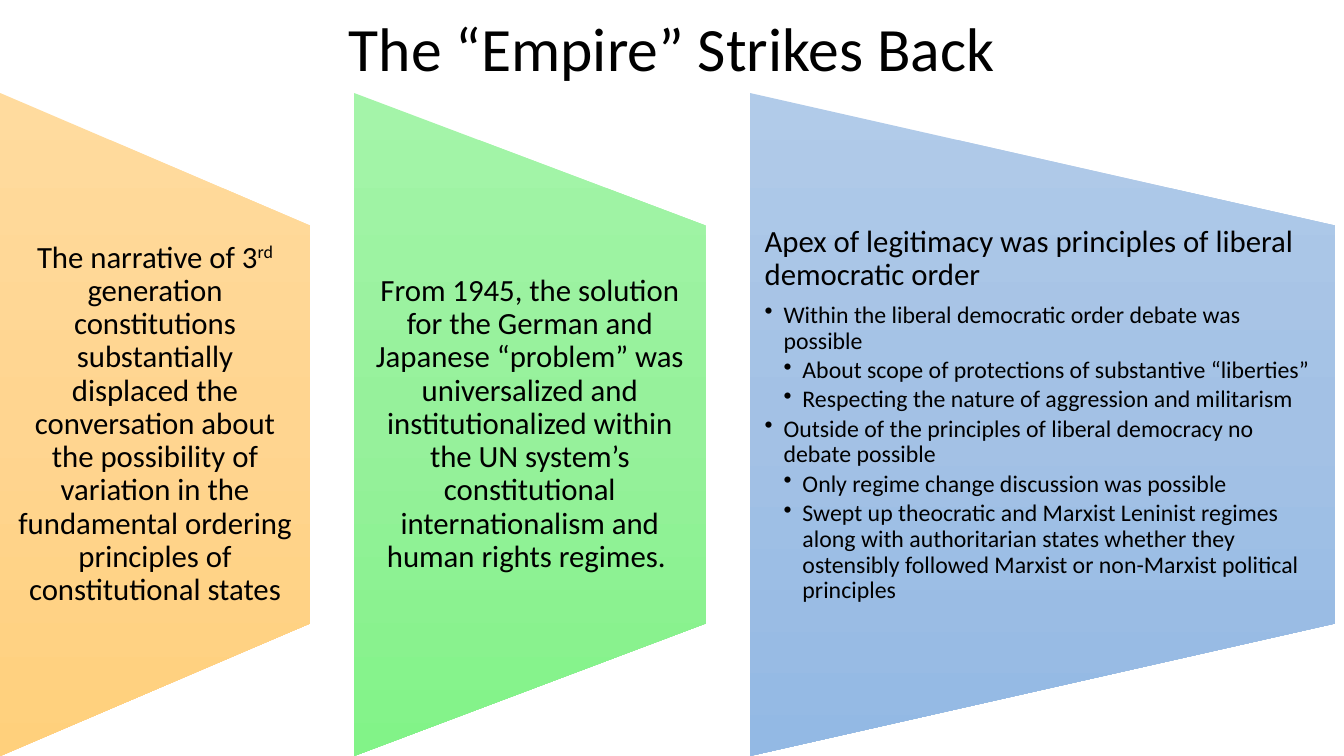
from copy import deepcopy

from lxml.etree import SubElement
from pptx import Presentation
from pptx.dml.color import RGBColor
from pptx.enum.shapes import MSO_SHAPE
from pptx.enum.text import MSO_ANCHOR, PP_ALIGN
from pptx.oxml.ns import qn
from pptx.util import Pt

TITLE = "The “Empire” Strikes Back"

# Each panel: width, gradient, alignment, anchor, and (level, text runs) paragraphs.
# A run starting with "^" is superscript.
PANELS = [
    (221.4, "amber", PP_ALIGN.CENTER, MSO_ANCHOR.MIDDLE, [
        (0, ["The narrative of 3", "^rd",
             " generation constitutions substantially displaced the conversation about "
             "the possibility of variation in the fundamental ordering principles of "
             "constitutional states"]),
    ]),
    (251.3, "green", PP_ALIGN.CENTER, MSO_ANCHOR.MIDDLE, [
        (0, ["From 1945, the solution for the German and Japanese “problem” was "
             "universalized and institutionalized within the UN system’s constitutional "
             "internationalism and human rights regimes. "]),
    ]),
    (418.3, "blue", PP_ALIGN.LEFT, MSO_ANCHOR.TOP, [
        (0, ["Apex of legitimacy was principles of liberal democratic order"]),
        (1, ["Within the liberal democratic order debate was possible"]),
        (2, ["About scope of protections of substantive “liberties”"]),
        (2, ["Respecting the nature of aggression and militarism"]),
        (1, ["Outside of the principles of liberal democracy no debate possible"]),
        (2, ["Only regime change discussion was possible"]),
        (2, ["Swept up theocratic and Marxist Leninist regimes along with authoritarian "
             "states whether they ostensibly followed Marxist or non-Marxist political "
             "principles"]),
    ]),
]

THEME = {
    "font": "Calibri",
    "text": "000000",
    "title": 44,
    "lead": 22,
    "bullet": 17,
    "amber": ["FFDB9E", "FFD590", "FFD07C"],
    "green": ["A4F4A9", "96F19B", "82F388"],
    "blue": ["B1CBE9", "A3C1E5", "93B9E4"],
}

PANEL_TOP, PANEL_HEIGHT, PANEL_GAP = 66.4, 473.6, 31.4
TEXT_TOP, TEXT_HEIGHT = PANEL_TOP + PANEL_HEIGHT / 5, PANEL_HEIGHT * 3 / 5
TEXT_INSET, BULLET_INDENT = 10.7, 13.5


def style(paragraph, size, alignment):
    paragraph.alignment = alignment
    paragraph.line_spacing = 0.9
    paragraph.font.size = Pt(size)
    paragraph.font.name = THEME["font"]
    paragraph.font.color.rgb = RGBColor.from_string(THEME["text"])


def add_bullet(paragraph, level):
    properties = paragraph._p.get_or_add_pPr()
    properties.set("marL", str(Pt(BULLET_INDENT * level)))
    properties.set("indent", str(-Pt(BULLET_INDENT)))
    SubElement(properties, qn("a:buChar"), char="•")


def fill_downwards(shape, colours):
    """Fill with a top-to-bottom gradient that ignores the shape's rotation."""
    shape.fill.gradient()
    shape.fill.gradient_angle = 270
    gradient = shape._element.spPr.find(qn("a:gradFill"))
    gradient.set("rotWithShape", "0")
    stop_list = gradient.find(qn("a:gsLst"))
    stop_list.append(deepcopy(stop_list[0]))
    for index, (stop, colour) in enumerate(zip(shape.fill.gradient_stops, colours)):
        stop.position = index / (len(colours) - 1)
        stop.color.rgb = RGBColor.from_string(colour)


def add_panel(slide, left, width, colours):
    """Add a trapezoid turned a quarter left, so its narrow end is on the right."""
    centre_x, centre_y = left + width / 2, PANEL_TOP + PANEL_HEIGHT / 2
    panel = slide.shapes.add_shape(
        MSO_SHAPE.FLOWCHART_MANUAL_OPERATION,
        Pt(centre_x - PANEL_HEIGHT / 2), Pt(centre_y - width / 2),
        Pt(PANEL_HEIGHT), Pt(width))
    panel.rotation = 270
    panel.shadow.inherit = False
    panel.line.fill.background()
    fill_downwards(panel, colours)


def add_panel_text(slide, left, width, alignment, anchor, paragraphs):
    frame = slide.shapes.add_textbox(
        Pt(left), Pt(TEXT_TOP), Pt(width), Pt(TEXT_HEIGHT)).text_frame
    frame.word_wrap = True
    frame.vertical_anchor = anchor
    frame.margin_left = frame.margin_right = Pt(TEXT_INSET)
    frame.margin_top = frame.margin_bottom = 0
    for index, (level, texts) in enumerate(paragraphs):
        paragraph = frame.add_paragraph() if index else frame.paragraphs[0]
        for text in texts:
            run = paragraph.add_run()
            run.text = text.removeprefix("^")
            if text.startswith("^"):
                run.font._element.set("baseline", "30000")
        if level:
            paragraph.level = level
            add_bullet(paragraph, level)
        style(paragraph, THEME["bullet" if level else "lead"], alignment)
        paragraph.space_after = Pt(2.6 if level else 7.7)


def main():
    presentation = Presentation()
    presentation.slide_width, presentation.slide_height = Pt(960), Pt(540)
    slide = presentation.slides.add_slide(presentation.slide_layouts[6])

    title = slide.shapes.add_textbox(Pt(66), Pt(0), Pt(828), Pt(74)).text_frame
    title.word_wrap = True
    title.vertical_anchor = MSO_ANCHOR.MIDDLE
    title.text = TITLE
    style(title.paragraphs[0], THEME["title"], PP_ALIGN.CENTER)

    left = 0
    for width, gradient, alignment, anchor, paragraphs in PANELS:
        add_panel(slide, left, width, THEME[gradient])
        add_panel_text(slide, left, width, alignment, anchor, paragraphs)
        left += width + PANEL_GAP

    presentation.save("out.pptx")


if __name__ == "__main__":
    main()
